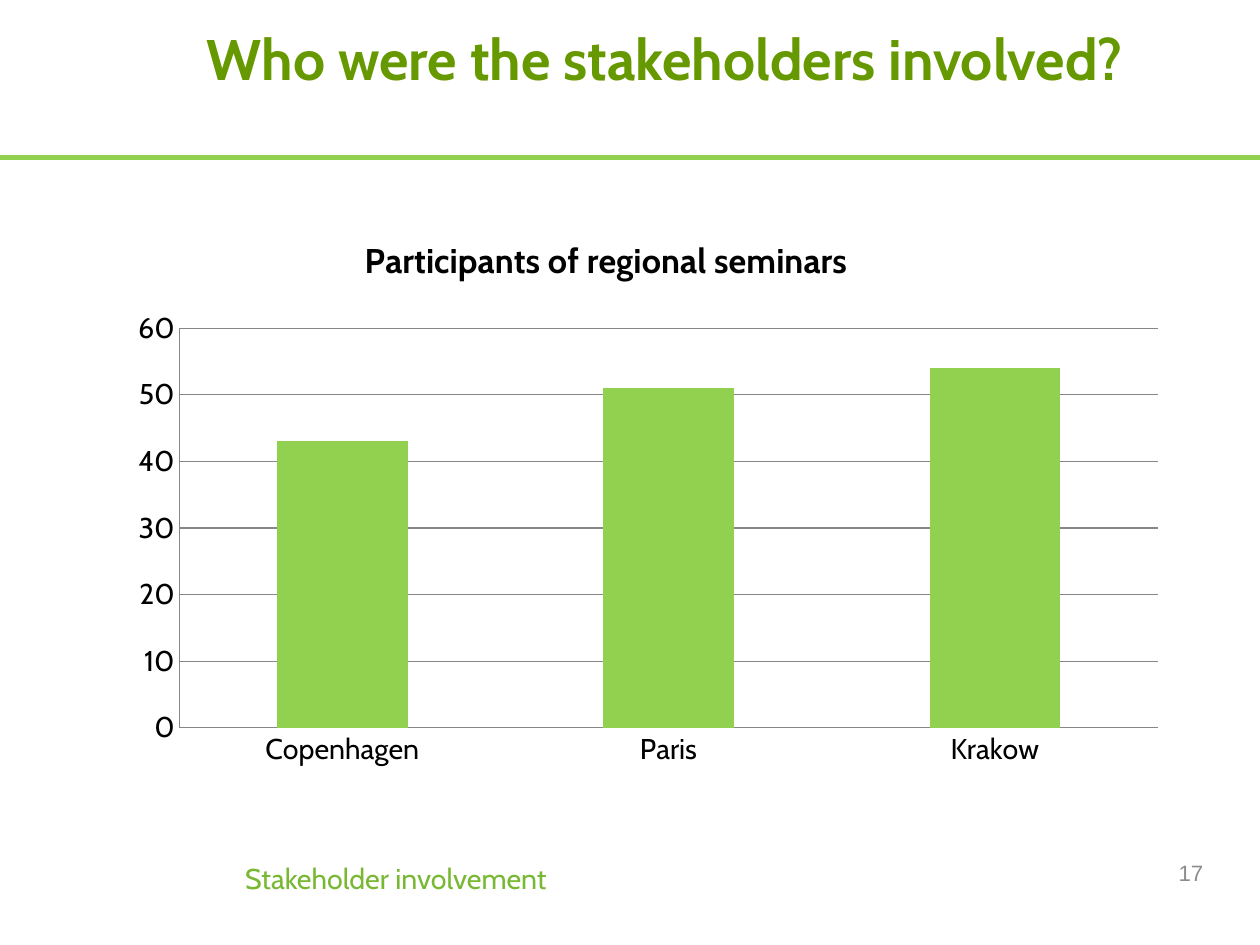
import pptx
import pptx.chart.data
import pptx.dml.color
import pptx.enum.chart
import pptx.enum.shapes
import pptx.enum.text
import pptx.oxml
import pptx.oxml.ns
import pptx.util

WIDTH = pptx.util.Emu(10080625)
HEIGHT = pptx.util.Emu(7559675)
GREEN = "92D050"
GREY = "878787"
ALIGN = pptx.enum.text.PP_ALIGN
ANCHOR = pptx.enum.text.MSO_ANCHOR


def area(left, top, width, height):
    """Turn percentages of the slide into a position and size."""
    return [round(share * side / 100) for share, side in
            zip((left, top, width, height), (WIDTH, HEIGHT, WIDTH, HEIGHT))]


def color(value):
    """Return the colour for a hex string."""
    return pptx.dml.color.RGBColor.from_string(value)


def set_font(font, size, fill, name="Cabin", bold=False):
    """Format a font of a text or a chart."""
    font.size = pptx.util.Pt(size)
    font.name = name
    font.bold = bold
    font.color.rgb = color(fill)


def add_text(slide, text, box, size, fill, name="Cabin", bold=False,
             align=ALIGN.LEFT, anchor=ANCHOR.TOP, inset=0.1, spacing=1):
    """Add a text box with one formatted paragraph."""
    frame = slide.shapes.add_textbox(*area(*box)).text_frame
    frame.word_wrap = True
    frame.vertical_anchor = anchor
    frame.margin_left = frame.margin_right = pptx.util.Inches(inset)
    frame.margin_top = frame.margin_bottom = pptx.util.Inches(inset / 2)
    paragraph = frame.paragraphs[0]
    paragraph.alignment = align
    paragraph.line_spacing = spacing
    run = paragraph.add_run()
    run.text = text
    set_font(run.font, size, fill, name, bold)


def add_rule(slide, top, fill, weight):
    """Draw a horizontal line across the slide."""
    left, top, width, _ = area(0, top, 100, 0)
    rule = slide.shapes.add_connector(
        pptx.enum.shapes.MSO_CONNECTOR.STRAIGHT, left, top, width, top)
    rule.line.color.rgb = color(fill)
    rule.line.width = pptx.util.Pt(weight)
    rule._element.spPr.append(pptx.oxml.parse_xml(
        f"<a:effectLst {pptx.oxml.ns.nsdecls('a')}/>"))


def make_layout(inner=False, **shares):
    """Build a manual chart layout from shares of the chart's size."""
    target = '<c:layoutTarget val="inner"/>' if inner else ""
    modes = "".join(f'<c:{axis}Mode val="edge"/>' for axis in "xy")
    values = "".join(f'<c:{key} val="{value}"/>' for key, value in shares.items())
    return pptx.oxml.parse_xml(
        f"<c:layout {pptx.oxml.ns.nsdecls('c')}><c:manualLayout>"
        f"{target}{modes}{values}</c:manualLayout></c:layout>")


def style_axis(axis):
    """Give an axis a thin grey line without ticks."""
    axis.major_tick_mark = axis.minor_tick_mark = pptx.enum.chart.XL_TICK_MARK.NONE
    axis.format.line.color.rgb = color(GREY)
    axis.format.line.width = pptx.util.Pt(0.75)


def place_chart_parts(chart):
    """Fix the places of the chart title and the plot area."""
    title = chart.chart_title._element
    for layout in title.findall(pptx.oxml.ns.qn("c:layout")):
        title.remove(layout)
    title.find(pptx.oxml.ns.qn("c:tx")).addnext(make_layout(x=0.228, y=0.017))
    plot_area = chart._chartSpace.chart.plotArea
    for layout in plot_area.findall(pptx.oxml.ns.qn("c:layout")):
        plot_area.remove(layout)
    plot_area.insert(0, make_layout(inner=True, x=0.059, y=0.193, w=0.922, h=0.717))


def add_column_chart(slide, title, values, box):
    """Add the column chart with its title and gridlines."""
    data = pptx.chart.data.CategoryChartData()
    data.categories = list(values)
    data.add_series("Series 1", list(values.values()))
    chart = slide.shapes.add_chart(
        pptx.enum.chart.XL_CHART_TYPE.COLUMN_CLUSTERED, *area(*box), data).chart
    set_font(chart.font, 18, "000000")
    chart.has_legend = False
    chart.has_title = True
    paragraph = chart.chart_title.text_frame.paragraphs[0]
    run = paragraph.add_run()
    run.text = title
    set_font(run.font, 21.6, "000000", bold=True)

    plot = chart.plots[0]
    plot.gap_width = 150
    plot.vary_by_categories = False
    fill = plot.series[0].format.fill
    fill.solid()
    fill.fore_color.rgb = color(GREEN)

    style_axis(chart.category_axis)
    axis = chart.value_axis
    style_axis(axis)
    axis.minimum_scale, axis.maximum_scale, axis.major_unit = 0, 60, 10
    axis.has_major_gridlines = True
    axis.major_gridlines.format.line.color.rgb = color(GREY)
    axis.major_gridlines.format.line.width = pptx.util.Pt(0.75)
    place_chart_parts(chart)


def main():
    """Build and save the slide."""
    presentation = pptx.Presentation()
    presentation.slide_width = WIDTH
    presentation.slide_height = HEIGHT
    slide = presentation.slides.add_slide(presentation.slide_layouts[6])
    add_rule(slide, 16.69, GREEN, 3)
    add_text(slide, "Who were the stakeholders involved?", (16.42, 2.42, 78.95, 16.69),
             36, "669900", bold=True, inset=0, spacing=1.01)
    add_text(slide, "17", (73.1, 89.7, 23.3, 5.32), 14, "8C8C8C", name="Arial",
             align=ALIGN.RIGHT, anchor=ANCHOR.MIDDLE)
    add_column_chart(slide, "Participants of regional seminars",
                     {"Copenhagen": 43, "Paris": 51, "Krakow": 54},
                     (9.25, 23.34, 84.26, 59))
    add_text(slide, "Stakeholder involvement", (18.57, 90.85, 26.68, 4.59),
             18, "78B832", spacing=0.93)
    presentation.save("out.pptx")


if __name__ == "__main__":
    main()
